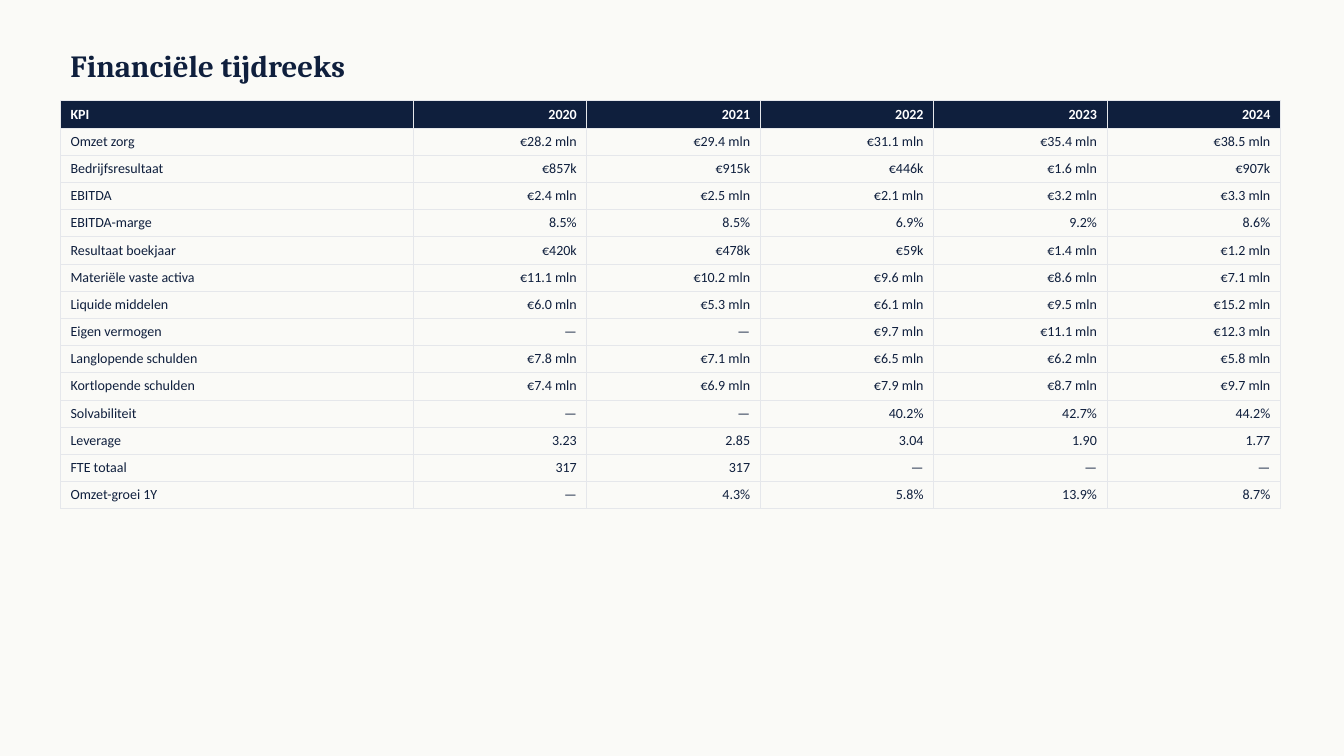
from lxml import etree
from pptx import Presentation
from pptx import util as u
from pptx.dml.color import RGBColor
from pptx.enum import text
from pptx.oxml.ns import qn

# Content
TITLE = "Financiële tijdreeks"
HEADER = ("KPI", "2020", "2021", "2022", "2023", "2024")
KPIS = [
    ("Omzet zorg", "€28.2 mln", "€29.4 mln", "€31.1 mln", "€35.4 mln", "€38.5 mln"),
    ("Bedrijfsresultaat", "€857k", "€915k", "€446k", "€1.6 mln", "€907k"),
    ("EBITDA", "€2.4 mln", "€2.5 mln", "€2.1 mln", "€3.2 mln", "€3.3 mln"),
    ("EBITDA-marge", "8.5%", "8.5%", "6.9%", "9.2%", "8.6%"),
    ("Resultaat boekjaar", "€420k", "€478k", "€59k", "€1.4 mln", "€1.2 mln"),
    ("Materiële vaste activa", "€11.1 mln", "€10.2 mln", "€9.6 mln", "€8.6 mln", "€7.1 mln"),
    ("Liquide middelen", "€6.0 mln", "€5.3 mln", "€6.1 mln", "€9.5 mln", "€15.2 mln"),
    ("Eigen vermogen", "—", "—", "€9.7 mln", "€11.1 mln", "€12.3 mln"),
    ("Langlopende schulden", "€7.8 mln", "€7.1 mln", "€6.5 mln", "€6.2 mln", "€5.8 mln"),
    ("Kortlopende schulden", "€7.4 mln", "€6.9 mln", "€7.9 mln", "€8.7 mln", "€9.7 mln"),
    ("Solvabiliteit", "—", "—", "40.2%", "42.7%", "44.2%"),
    ("Leverage", "3.23", "2.85", "3.04", "1.90", "1.77"),
    ("FTE totaal", "317", "317", "—", "—", "—"),
    ("Omzet-groei 1Y", "—", "4.3%", "5.8%", "13.9%", "8.7%"),
]

# Layout in px, 100 to the inch
PX = 9144
LEFT, TABLE_TOP = 60, 100
KPI_WIDTH, YEAR_WIDTH, ROW_HEIGHT = 350, 172, 27

NAVY = RGBColor(0x0F, 0x1F, 0x3D)
WHITE = RGBColor(0xFF, 0xFF, 0xFF)
PAPER = RGBColor(0xFA, 0xFA, 0xF7)
RULE = RGBColor(0xE5, 0xE7, 0xEB)


def write(frame, content, *, font="Calibri", size=10, color=NAVY, bold=False,
          align=text.PP_ALIGN.LEFT):
    paragraph = frame.paragraphs[0]
    paragraph.alignment = align
    run = paragraph.add_run()
    run.text = content
    run.font.name = font
    run.font.size = u.Pt(size)
    run.font.bold = bold
    run.font.color.rgb = color


def add_borders(cell, color, width):
    properties = cell._tc.get_or_add_tcPr()
    for side in ("a:lnL", "a:lnR", "a:lnT", "a:lnB"):
        line = etree.SubElement(properties, qn(side), w=str(u.Pt(width)))
        fill = etree.SubElement(line, qn("a:solidFill"))
        etree.SubElement(fill, qn("a:srgbClr"), val=str(color))


def main():
    presentation = Presentation()
    presentation.slide_width = 1333 * PX
    presentation.slide_height = 750 * PX
    slide = presentation.slides.add_slide(presentation.slide_layouts[6])
    slide.background.fill.solid()
    slide.background.fill.fore_color.rgb = PAPER

    # Title
    title = slide.shapes.add_textbox(LEFT * PX, 40 * PX, 1200 * PX, 50 * PX)
    title.text_frame.word_wrap = True
    title.text_frame.vertical_anchor = text.MSO_ANCHOR.MIDDLE
    write(title.text_frame, TITLE, font="Cambria", size=22, bold=True)

    # KPI table
    rows = [HEADER, *KPIS]
    widths = [KPI_WIDTH] + [YEAR_WIDTH] * (len(HEADER) - 1)
    table = slide.shapes.add_table(
        len(rows), len(HEADER), LEFT * PX, TABLE_TOP * PX,
        sum(widths) * PX, len(rows) * ROW_HEIGHT * PX).table
    table.horz_banding = False
    for column, width in zip(table.columns, widths):
        column.width = width * PX

    for row_index, values in enumerate(rows):
        table.rows[row_index].height = ROW_HEIGHT * PX
        is_header = row_index == 0
        for column_index, value in enumerate(values):
            cell = table.cell(row_index, column_index)
            add_borders(cell, RULE, 0.5)
            if is_header:
                cell.fill.solid()
                cell.fill.fore_color.rgb = NAVY
            else:
                cell.fill.background()
            write(cell.text_frame, value, bold=is_header,
                  color=WHITE if is_header else NAVY,
                  align=text.PP_ALIGN.RIGHT if column_index else text.PP_ALIGN.LEFT)

    presentation.save("out.pptx")


if __name__ == "__main__":
    main()
